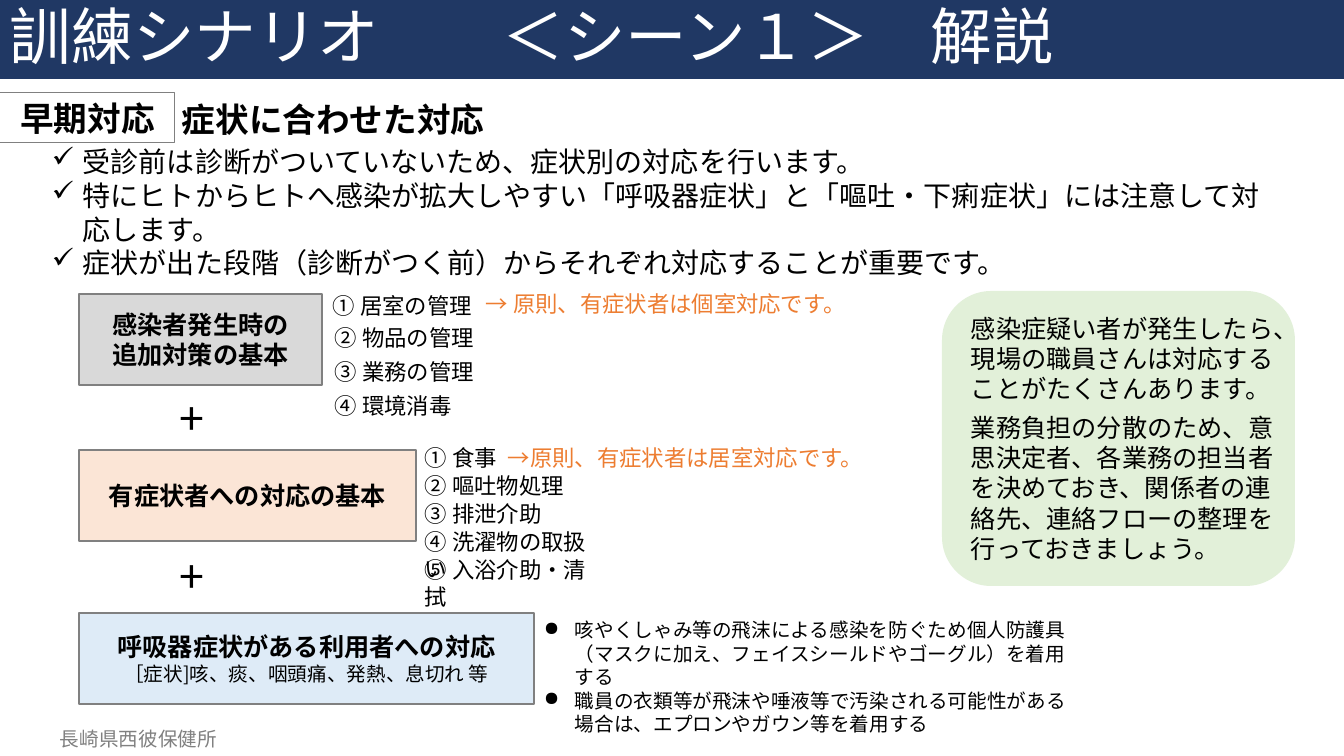
"""Builds the training scenario slide explaining early, symptom-based response."""
import pptx
import pptx.util
import pptx.dml.color
import pptx.enum.shapes
import pptx.enum.text
import pptx.oxml.ns
import lxml.etree

RGB = pptx.dml.color.RGBColor
ANCHOR = pptx.enum.text.MSO_ANCHOR
ALIGN = pptx.enum.text.PP_ALIGN
SHAPE = pptx.enum.shapes.MSO_SHAPE

NAVY = RGB(0x20, 0x38, 0x64)
BLACK = RGB(0, 0, 0)
WHITE = RGB(0xFF, 0xFF, 0xFF)
GRAY = RGB(0x80, 0x80, 0x80)
ORANGE = RGB(0xED, 0x7D, 0x31)
SILVER = RGB(0xD9, 0xD9, 0xD9)
PEACH = RGB(0xFB, 0xE5, 0xD6)
SKY = RGB(0xDE, 0xEB, 0xF7)
MINT = RGB(0xE2, 0xF0, 0xD9)

FONT = "Noto Sans CJK JP"
PX = 914400 / 100.8
INDENT = 31

TITLE = "訓練シナリオ　　＜シーン１＞　解説"
TAG = "早期対応"
HEADING = "症状に合わせた対応"
FOOTER = "長崎県西彼保健所"
POINTS = [
    "受診前は診断がついていないため、症状別の対応を行います。",
    "特にヒトからヒトへ感染が拡大しやすい「呼吸器症状」と「嘔吐・下痢症状」には注意して対応します。",
    "症状が出た段階（診断がつく前）からそれぞれ対応することが重要です。",
]
STAGES = [
    (294, 243, SILVER, [("感染者発生時の", 18, True), ("追加対策の基本", 18, True)]),
    (450, 337, PEACH, [("有症状者への対応の基本", 18, True)]),
    (613, 455, SKY, [("呼吸器症状がある利用者への対応", 18, True),
                     ("［症状]咳、痰、咽頭痛、発熱、息切れ 等", 14, False)]),
]
PLUS_TOPS = [386, 544]
FIRST_MEASURE = "① 居室の管理"
OTHER_MEASURES = ["② 物品の管理", "③ 業務の管理", "④ 環境消毒"]
CARE_TASKS = ["① 食事", "② 嘔吐物処理", "③ 排泄介助", "④ 洗濯物の取扱い"]
LAST_CARE_TASK = "⑤ 入浴介助・清拭"
ROOM_NOTES = [
    (476, 285, "→ 原則、有症状者は個室対応です。"),
    (498, 439, "→原則、有症状者は居室対応です。"),
]
PROTECTION = [
    "咳やくしゃみ等の飛沫による感染を防ぐため個人防護具（マスクに加え、フェイスシールドやゴーグル）を着用する",
    "職員の衣類等が飛沫や唾液等で汚染される可能性がある場合は、エプロンやガウン等を着用する",
]
ADVICE = [
    "感染症疑い者が発生したら、現場の職員さんは対応することがたくさんあります。",
    "業務負担の分散のため、意思決定者、各業務の担当者を決めておき、関係者の連絡先、連絡フローの整理を行っておきましょう。",
]


def emu(*lengths):
    return [pptx.util.Emu(round(length * PX)) for length in lengths]


def add_bullet(paragraph, mark):
    properties = paragraph._p.get_or_add_pPr()
    indent = emu(INDENT)[0]
    properties.set("marL", str(indent))
    properties.set("indent", str(-indent))
    bullet = lxml.etree.SubElement(properties, pptx.oxml.ns.qn("a:buChar"))
    bullet.set("char", mark)


def write(frame, lines, color=BLACK, align=ALIGN.LEFT, bullet=None):
    frame.text = "\n".join(text for text, size, bold in lines)
    for paragraph, (text, size, bold) in zip(frame.paragraphs, lines):
        paragraph.alignment = align
        if bullet:
            add_bullet(paragraph, bullet)
        for run in paragraph.runs:
            run.font.size = pptx.util.Pt(size)
            run.font.bold = bold
            run.font.color.rgb = color
            run.font.name = FONT
            east_asian = lxml.etree.SubElement(run.font._element, pptx.oxml.ns.qn("a:ea"))
            east_asian.set("typeface", FONT)


def add_text(slide, box, texts, size, color=BLACK, bold=False, wrap=False, bullet=None):
    frame = slide.shapes.add_textbox(*emu(*box)).text_frame
    frame.word_wrap = wrap
    write(frame, [(text, size, bold) for text in texts], color, bullet=bullet)
    return frame


def add_block(slide, box, fill=None, line_width=None, kind=SHAPE.RECTANGLE):
    block = slide.shapes.add_shape(kind, *emu(*box))
    block.shadow.inherit = False
    if fill is None:
        block.fill.background()
    else:
        block.fill.solid()
        block.fill.fore_color.rgb = fill
    if line_width:
        block.line.color.rgb = GRAY
        block.line.width = pptx.util.Pt(line_width)
    else:
        block.line.fill.background()
    return block.text_frame


def main():
    deck = pptx.Presentation()
    deck.slide_width, deck.slide_height = emu(1344, 756)
    slide = deck.slides.add_slide(deck.slide_layouts[6])

    add_text(slide, (50, 722, 178, 34), [FOOTER], 14, GRAY)
    banner = add_block(slide, (0, 0, 1344, 79), NAVY)
    banner.vertical_anchor = ANCHOR.MIDDLE
    write(banner, [(TITLE, 44, False)], WHITE)
    banner.paragraphs[0].line_spacing = 0.9

    add_text(slide, (172, 94, 325, 50), [HEADING], 24, bold=True)
    tag = add_block(slide, (0, 93, 175, 50), line_width=0.75)
    tag.vertical_anchor = ANCHOR.TOP
    write(tag, [(TAG, 24, True)], align=ALIGN.CENTER)
    add_text(slide, (42, 140, 1253, 112), POINTS, 20, wrap=True, bullet="✓")

    add_text(slide, (323, 287, 163, 37), [FIRST_MEASURE], 16)
    for row, measure in enumerate(OTHER_MEASURES):
        add_text(slide, (325, 319 + 34 * row, 163, 37), [measure], 16)
    for row, task in enumerate(CARE_TASKS + [LAST_CARE_TASK]):
        add_text(slide, (415, 439 + 28 * row, 198, 37), [task], 16, wrap=task == LAST_CARE_TASK)
    for left, top, note in ROOM_NOTES:
        add_text(slide, (left, top, 370, 37), [note], 16, ORANGE)

    for top, width, fill, lines in STAGES:
        stage = add_block(slide, (79, top, width, 91), fill, 1)
        stage.vertical_anchor = ANCHOR.MIDDLE
        write(stage, lines, align=ALIGN.CENTER)
    for top in PLUS_TOPS:
        add_text(slide, (170, top, 58, 65), ["+"], 32)
    add_text(slide, (534, 613, 555, 105), PROTECTION, 14, wrap=True, bullet="●")

    add_block(slide, (942, 291, 353, 295), MINT, kind=SHAPE.ROUNDED_RECTANGLE)
    advice = add_text(slide, (961, 308, 323, 263), ADVICE, 18, wrap=True)
    advice.paragraphs[1].space_before = pptx.util.Pt(6)

    deck.save("out.pptx")


if __name__ == "__main__":
    main()
